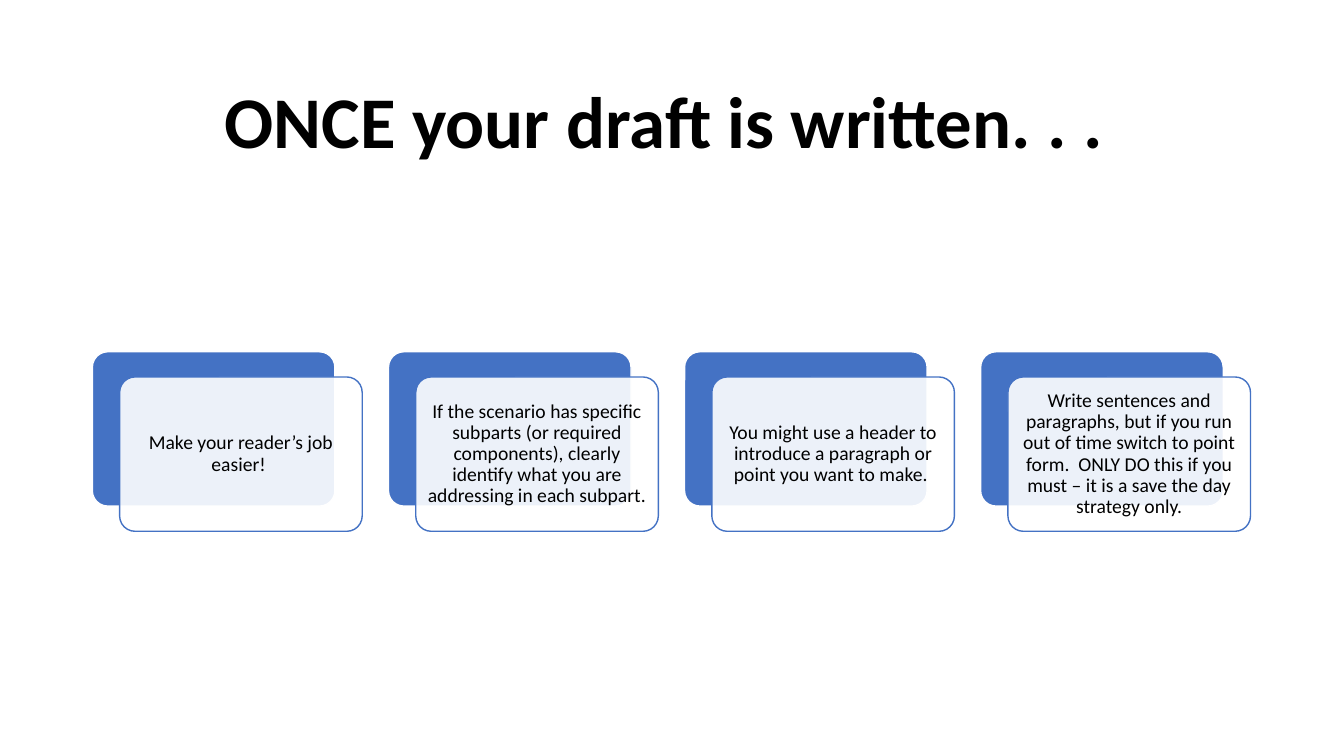
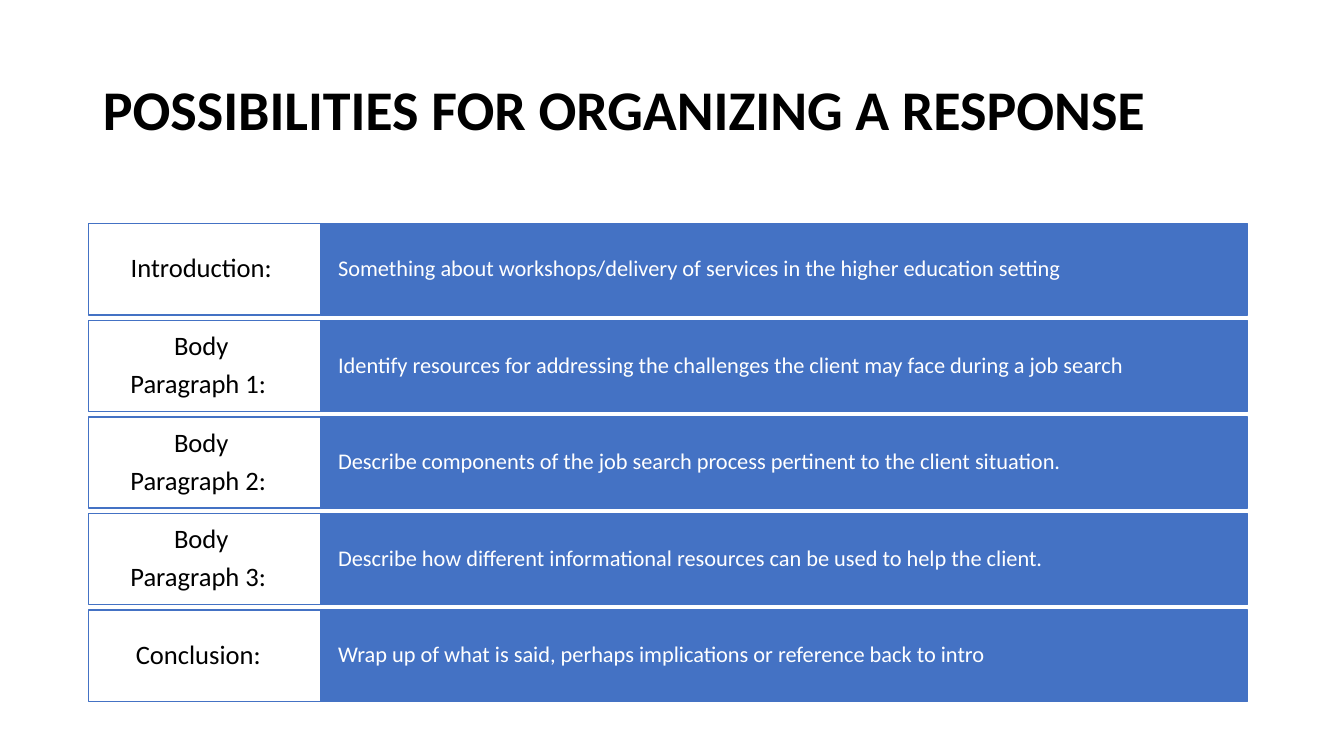
from lxml import etree
from pptx import Presentation
from pptx import util as u
from pptx.dml import color
from pptx.enum import shapes, text
from pptx.oxml import ns

PX = 9525
FONT = "Calibri"
COLORS = {"blue": "4472C4", "white": "FFFFFF", "black": "000000"}
TITLE = {"bold": True, "insets": (10, 5)}


def add_block(slide, kind, box, fill, line):
    shape = slide.shapes.add_shape(kind, *(value * PX for value in box))
    shape.shadow.inherit = False
    shape.fill.solid()
    shape.fill.fore_color.rgb = color.RGBColor.from_string(COLORS[fill])
    shape.line.color.rgb = color.RGBColor.from_string(COLORS[line])
    shape.line.width = u.Pt(1)
    return shape


def write(shape, content, size, ink="black", bold=False, align="LEFT", insets=(6, 6), after=0):
    frame = shape.text_frame
    frame.word_wrap = True
    frame.vertical_anchor = text.MSO_ANCHOR.MIDDLE
    frame.margin_left = frame.margin_right = insets[0] * PX
    frame.margin_top = frame.margin_bottom = insets[1] * PX
    frame.text = content
    for paragraph in frame.paragraphs:
        paragraph.alignment = getattr(text.PP_ALIGN, align)
        paragraph.line_spacing = 0.9
        paragraph.space_after = u.Pt(after)
        for run in paragraph.runs:
            run.font.name = FONT
            run.font.size = u.Pt(size)
            run.font.bold = bold
            run.font.color.rgb = color.RGBColor.from_string(COLORS[ink])


presentation = Presentation()
presentation.slide_width = 1280 * PX
presentation.slide_height = 720 * PX
blank = presentation.slide_layouts[6]

slide = presentation.slides.add_slide(blank)
title = slide.shapes.add_textbox(88 * PX, 59 * PX, 1104 * PX, 119 * PX)
write(title, "ONCE your draft is written. . . ", 52, align="CENTER", **TITLE)

tips = [
    "Make your reader’s job easier! ",
    "If the scenario has specific subparts (or required components), clearly identify what you are addressing in each subpart. ",
    "You might use a header to introduce a paragraph or point you want to make. ",
    "Write sentences and paragraphs, but if you run out of time switch to point form.  ONLY DO this if you must – it is a save the day strategy only.",
]
rounded = shapes.MSO_SHAPE.ROUNDED_RECTANGLE
for index, tip in enumerate(tips):
    left = 88 + index * 282
    back = add_block(slide, rounded, (left, 335, 231, 147), "blue", "white")
    front = add_block(slide, rounded, (left + 26, 359, 231, 147), "white", "blue")
    for card in (back, front):
        card.adjustments[0] = 0.1
    tint = front.fill._xPr.find(".//" + ns.qn("a:srgbClr"))
    etree.SubElement(tint, ns.qn("a:alpha"), val="90000")
    write(front, tip, 14, align="CENTER")

slide = presentation.slides.add_slide(blank)
title = slide.shapes.add_textbox(88 * PX, 38 * PX, 1104 * PX, 139 * PX)
write(title, "POSSIBILITIES FOR ORGANIZING A RESPONSE", 40, **TITLE)

sections = [
    ("Introduction: ", "Something about workshops/delivery of services in the higher education setting"),
    ("Body \nParagraph 1:  ", "Identify resources for addressing the challenges the client may face during a job search"),
    ("Body \nParagraph 2:  ", "Describe components of the job search process pertinent to the client situation."),
    ("Body \nParagraph 3:  ", "Describe how different informational resources can be used to help the client."),
    ("Conclusion:  ", "Wrap up of what is said, perhaps implications or reference back to intro"),
]
rectangle = shapes.MSO_SHAPE.RECTANGLE
for index, (label, detail) in enumerate(sections):
    top = 213 + index * 92
    bar = add_block(slide, rectangle, (305, top, 883, 87), "blue", "blue")
    write(bar, detail, 16, ink="white", insets=(17, 22))
    heading = add_block(slide, rectangle, (84, top, 221, 87), "white", "blue")
    write(heading, label, 19, align="CENTER", insets=(12, 9), after=6.5)

presentation.save("out.pptx")
